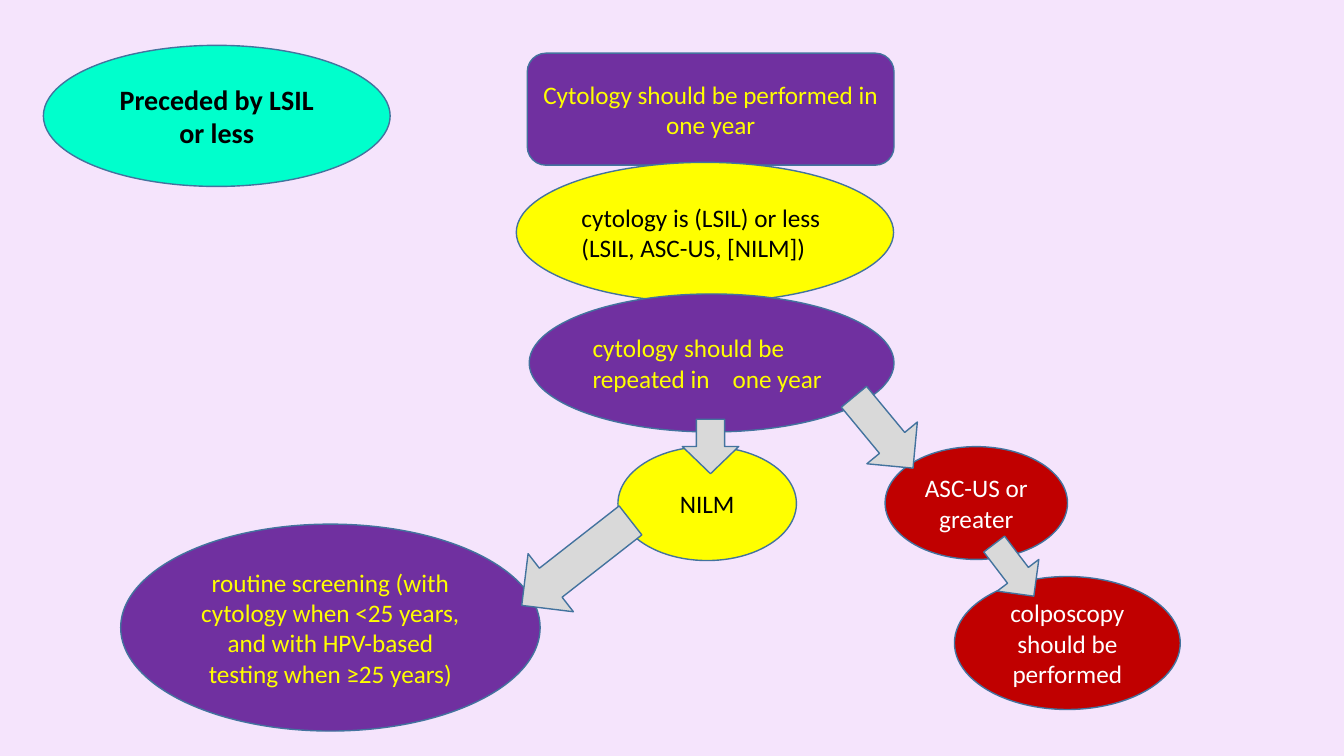
"""Build a slide with the cytology follow-up flowchart after LSIL or less."""
from dataclasses import dataclass

import pptx
import pptx.dml.color
import pptx.enum.shapes
import pptx.enum.text
import pptx.oxml
import pptx.oxml.ns
import pptx.util

Pt = pptx.util.Pt
Shape = pptx.enum.shapes.MSO_SHAPE
Align = pptx.enum.text.PP_ALIGN


@dataclass(frozen=True)
class Theme:
    background: str = "F5E4FC"
    outline: str = "43739E"
    aqua: str = "00FFCC"
    purple: str = "7030A0"
    yellow: str = "FFFF00"
    red: str = "C00000"
    grey: str = "D9D9D9"
    black: str = "000000"
    white: str = "FFFFFF"
    font: str = "Calibri"
    body: int = 18
    heading: int = 20


THEME = Theme()


@dataclass(frozen=True)
class Node:
    text: str
    left: float
    top: float
    width: float
    height: float
    fill: str
    color: str
    kind: Shape = Shape.OVAL
    align: Align = Align.CENTER
    size: int = THEME.body
    bold: bool = False
    tab: float = 0


@dataclass(frozen=True)
class Arrow:
    left: float
    top: float
    width: float
    height: float
    rotation: float = 0


NODES = [
    Node("Preceded by LSIL or less", 31, 32.4, 247.7, 100.8, THEME.aqua, THEME.black,
         size=THEME.heading, bold=True),
    Node("Cytology should be performed in one year", 376.6, 38, 262, 80,
         THEME.purple, THEME.yellow, kind=Shape.ROUNDED_RECTANGLE),
    Node("cytology is (LSIL) or less (LSIL, ASC-US, [NILM])", 368.8, 116, 269.5, 100,
         THEME.yellow, THEME.black, align=Align.LEFT),
    Node("routine screening (with cytology when <25 years, and with HPV-based "
         "testing when ≥25 years)", 86.2, 374.4, 299.6, 147.8, THEME.purple, THEME.yellow),
    Node("cytology should be repeated in\tone year", 378, 210, 260.6, 98.6,
         THEME.purple, THEME.yellow, align=Align.LEFT, tab=100),
    Node("NILM", 441.4, 319, 127.5, 81.4, THEME.yellow, THEME.black),
    Node("ASC-US or greater", 632.2, 319, 130.3, 80.6, THEME.red, THEME.white),
    Node("colposcopy should be performed", 681.8, 411.8, 161.3, 95,
         THEME.red, THEME.white),
]

ARROWS = [
    Arrow(487.4, 299.5, 40.3, 38.9),
    Arrow(607.7, 275.8, 46.8, 66.2, 320.4),
    Arrow(705.6, 383.8, 37.4, 46.8, 322.7),
    Arrow(385.2, 352.8, 52.6, 98.6, 52),
]


def rgb(value: str) -> pptx.dml.color.RGBColor:
    """Turn a hex string into a colour."""
    return pptx.dml.color.RGBColor.from_string(value)


def add_outlined(slide: pptx.slide.Slide, kind: Shape, box: Node | Arrow, fill: str):
    """Add a filled preset shape with the common outline."""
    sp = slide.shapes.add_shape(kind, Pt(box.left), Pt(box.top), Pt(box.width), Pt(box.height))
    sp.shadow.inherit = False
    sp.fill.solid()
    sp.fill.fore_color.rgb = rgb(fill)
    sp.line.color.rgb = rgb(THEME.outline)
    sp.line.width = Pt(1)
    return sp


def add_node(slide: pptx.slide.Slide, node: Node) -> None:
    """Add a flowchart step with its text."""
    tf = add_outlined(slide, node.kind, node, node.fill).text_frame
    tf.word_wrap = True
    tf.vertical_anchor = pptx.enum.text.MSO_ANCHOR.MIDDLE
    p = tf.paragraphs[0]
    p.text = node.text
    p.alignment = node.align
    p.font.name = THEME.font
    p.font.size = Pt(node.size)
    p.font.bold = node.bold
    p.font.color.rgb = rgb(node.color)
    if node.tab:
        tabs = pptx.oxml.parse_xml(
            f'<a:tabLst {pptx.oxml.ns.nsdecls("a")}>'
            f'<a:tab pos="{Pt(node.tab)}" algn="l"/></a:tabLst>')
        p._p.get_or_add_pPr().insert(0, tabs)


def add_arrow(slide: pptx.slide.Slide, arrow: Arrow) -> None:
    """Add a block arrow between two steps."""
    sp = add_outlined(slide, Shape.DOWN_ARROW, arrow, THEME.grey)
    sp.rotation = arrow.rotation


def main() -> None:
    """Draw the flowchart and save it."""
    prs = pptx.Presentation()
    prs.slide_width, prs.slide_height = Pt(960), Pt(540)
    slide = prs.slides.add_slide(prs.slide_layouts.get_by_name("Blank"))
    slide.background.fill.solid()
    slide.background.fill.fore_color.rgb = rgb(THEME.background)
    for node in NODES:
        add_node(slide, node)
    for arrow in ARROWS:
        add_arrow(slide, arrow)
    prs.save("out.pptx")


if __name__ == "__main__":
    main()
